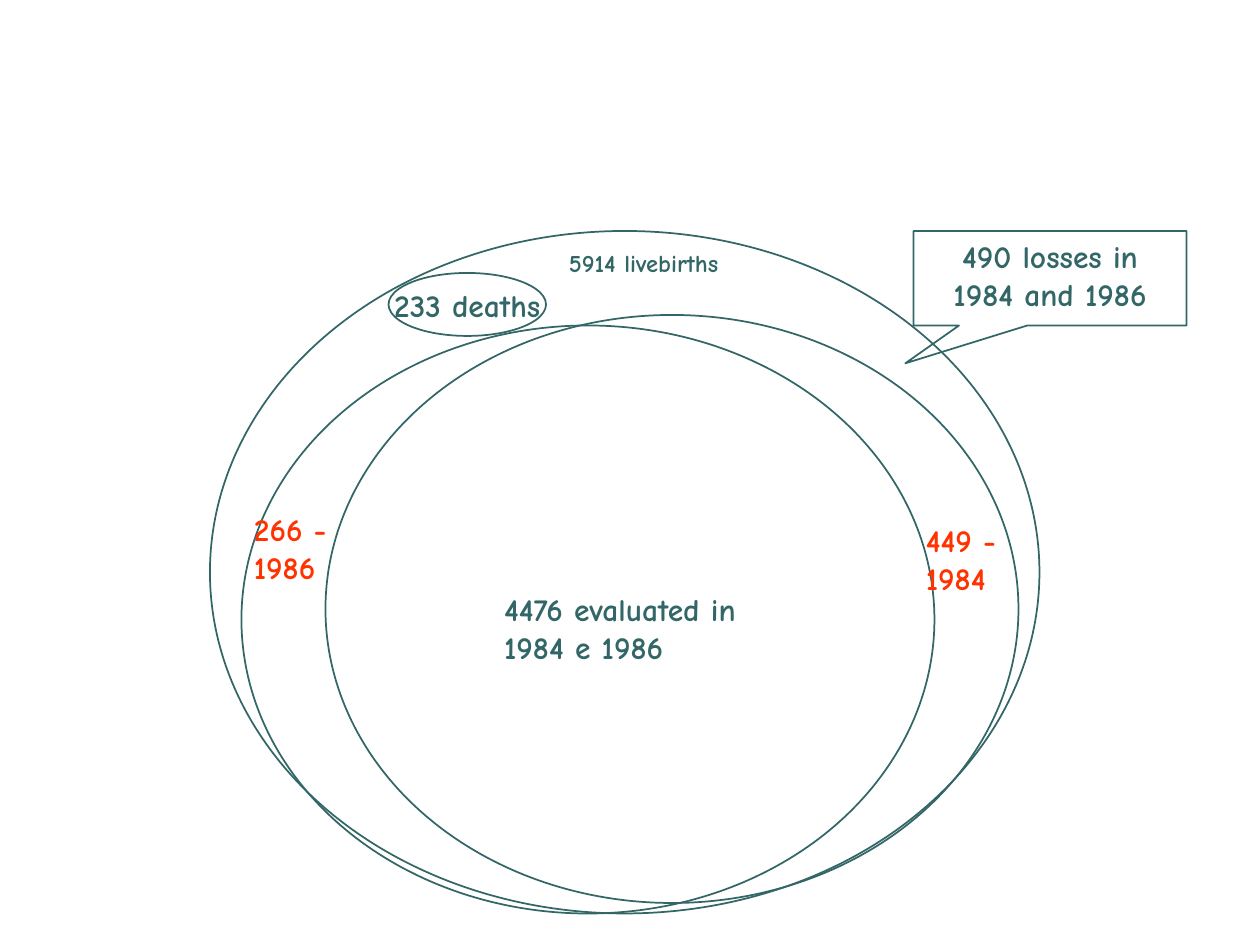
"""Build a slide of nested ellipses showing follow-up of a birth cohort."""
from pptx import Presentation
from pptx.dml.color import RGBColor
from pptx.enum import shapes, text
from pptx.util import Pt

TEAL = RGBColor(0x33, 0x66, 0x66)
RED = RGBColor(0xFF, 0x33, 0x00)
FONT = "Comic Neue"


def add_outline(slide, kind, left, top, width, height):
    shape = slide.shapes.add_shape(kind, Pt(left), Pt(top), Pt(width), Pt(height))
    shape.shadow.inherit = False
    shape.fill.background()
    shape.line.color.rgb = TEAL
    shape.line.width = Pt(1)
    return shape


def write_lines(frame, lines, size=18, color=TEAL, alignment=text.PP_ALIGN.LEFT):
    for index, line in enumerate(lines):
        paragraph = frame.add_paragraph() if index else frame.paragraphs[0]
        paragraph.text = line
        paragraph.alignment = alignment
        paragraph.font.name = FONT
        paragraph.font.size = Pt(size)
        paragraph.font.bold = True
        paragraph.font.color.rgb = color


presentation = Presentation()
presentation.slide_width = Pt(720)
presentation.slide_height = Pt(540)
slide = presentation.slides.add_slide(presentation.slide_layouts[6])

ELLIPSE = shapes.MSO_SHAPE.OVAL
livebirths = add_outline(slide, ELLIPSE, 120, 132, 474, 390)
deaths = add_outline(slide, ELLIPSE, 222, 156, 90, 36)
evaluated_1984 = add_outline(slide, ELLIPSE, 186, 180, 396, 336)
evaluated_1986 = add_outline(slide, ELLIPSE, 138, 186, 396, 336)

deaths.text_frame.word_wrap = False
deaths.text_frame.vertical_anchor = text.MSO_ANCHOR.MIDDLE
write_lines(deaths.text_frame, ["233 deaths"], alignment=text.PP_ALIGN.CENTER)

labels = [
    (["5914 livebirths"], 318, 138, 162, 24.25, 14, TEAL, True),
    (["4476 evaluated in", "1984 e 1986"], 281, 333.5, 172, 51, 18, TEAL, False),
    (["266 -", "1986"], 138, 288, 109, 51, 18, RED, True),
    (["449 -", "1984"], 522, 294, 72, 51, 18, RED, True),
]
for lines, left, top, width, height, size, color, wrap in labels:
    label = slide.shapes.add_textbox(Pt(left), Pt(top), Pt(width), Pt(height))
    label.text_frame.word_wrap = wrap
    label.text_frame.auto_size = text.MSO_AUTO_SIZE.SHAPE_TO_FIT_TEXT
    write_lines(label.text_frame, lines, size, color)

losses = add_outline(slide, shapes.MSO_SHAPE.RECTANGULAR_CALLOUT, 522, 132, 156, 54)
losses.adjustments[0] = -0.53
losses.adjustments[1] = 0.9
losses.text_frame.word_wrap = True
losses.text_frame.vertical_anchor = text.MSO_ANCHOR.TOP
write_lines(losses.text_frame, ["490 losses in", "1984 and 1986"],
            alignment=text.PP_ALIGN.CENTER)

presentation.save("out.pptx")
